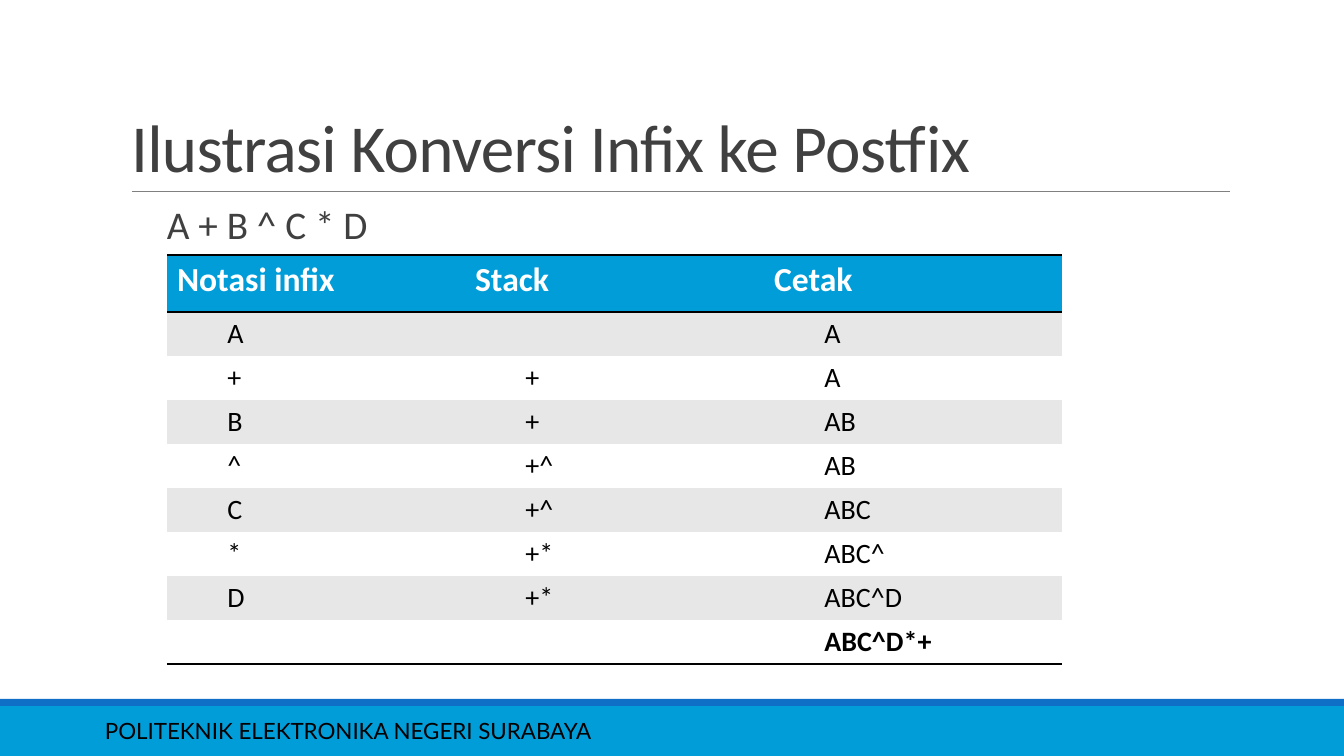
from lxml import etree
from pptx import Presentation
from pptx.dml.color import RGBColor
from pptx.enum.shapes import MSO_CONNECTOR, MSO_SHAPE
from pptx.enum.text import MSO_ANCHOR, MSO_AUTO_SIZE, PP_ALIGN
from pptx.oxml import parse_xml
from pptx.oxml.ns import nsdecls, qn
from pptx.util import Emu, Pt

RECT = MSO_SHAPE.RECTANGLE
STRAIGHT = MSO_CONNECTOR.STRAIGHT
MIDDLE, BOTTOM = MSO_ANCHOR.MIDDLE, MSO_ANCHOR.BOTTOM
LEFT = PP_ALIGN.LEFT
NO_FIT = MSO_AUTO_SIZE.NONE
SKY = RGBColor(0x00, 0x9D, 0xD9)
BLUE = RGBColor(0x0F, 0x6F, 0xC6)
RULE = RGBColor(0x80, 0x80, 0x80)
DARK = RGBColor(0x40, 0x40, 0x40)
BLACK = RGBColor(0x00, 0x00, 0x00)
WHITE = RGBColor(0xFF, 0xFF, 0xFF)
BAND = RGBColor(0xE7, 0xE7, 0xE7)
NO_STYLE = "{2D5ABB26-0587-4C30-8999-92F81FD0307C}"


def px(n):
    return Emu(round(n * 12192000 / 1344))


def style(p, font, size, color, bold=False):
    for r in p.runs:
        r.font.name = font
        r.font.size = Pt(size)
        r.font.color.rgb = color
        r.font.bold = bold


prs = Presentation()
prs.slide_width, prs.slide_height = px(1344), px(756)
s = prs.slides.add_slide(prs.slide_layouts[5])

for top, height, color in [(706, 50, SKY), (699, 7, BLUE)]:
    bar = s.shapes.add_shape(RECT, 0, px(top), px(1344), px(height))
    bar.shadow.inherit = False
    bar.fill.solid()
    bar.fill.fore_color.rgb = color
    bar.line.fill.background()

rule = s.shapes.add_connector(STRAIGHT, px(132), px(191), px(1230), px(191))
rule.line.color.rgb = RULE
rule.line.width = Pt(0.5)
etree.SubElement(rule._element.spPr, qn("a:effectLst"))

title = s.shapes.title
title.left, title.top, title.width, title.height = px(121), px(31), px(1109), px(160)
tf = title.text_frame
tf.auto_size = NO_FIT
tf.word_wrap = True
tf.vertical_anchor = BOTTOM
tf.text = "Ilustrasi Konversi Infix ke Postfix"
p = tf.paragraphs[0]
p.alignment = LEFT
p.line_spacing = 0.85
style(p, "Calibri", 48, DARK)
p.runs[0].font._element.set("spc", "-50")

footer = s.shapes.add_textbox(px(95), px(711), px(848), px(40))
tf = footer.text_frame
tf.word_wrap = True
tf.vertical_anchor = MIDDLE
tf.text = "POLITEKNIK ELEKTRONIKA NEGERI SURABAYA"
style(tf.paragraphs[0], "Lato", 16, BLACK)

formula = s.shapes.add_textbox(px(167), px(204), px(424), px(51))
tf = formula.text_frame
tf.word_wrap = True
tf.margin_left = tf.margin_right = 0
tf.text = "A + B ^ C * D"
p = tf.paragraphs[0]
p.line_spacing = 0.8
p.space_after = Pt(2)
style(p, "Calibri", 28, DARK)

steps = [
    ("Notasi infix", "Stack", "Cetak"),
    ("A", "", "A"),
    ("+", "+", "A"),
    ("B", "+", "AB"),
    ("^", "+^", "AB"),
    ("C", "+^", "ABC"),
    ("*", "+*", "ABC^"),
    ("D", "+*", "ABC^D"),
    ("", "", "ABC^D*+"),
]
last = len(steps) - 1
frame = s.shapes.add_table(len(steps), 3, px(167), px(255), px(895), px(409))
tbl = frame.table
tbl._tbl.tblPr.find(qn("a:tableStyleId")).text = NO_STYLE
for col, width in zip(tbl.columns, (298, 299, 298)):
    col.width = px(width)

for i, step in enumerate(steps):
    tbl.rows[i].height = px(44 if i else 57)
    for j, text in enumerate(step):
        cell = tbl.cell(i, j)
        cell.fill.solid()
        cell.fill.fore_color.rgb = SKY if i == 0 else BAND if i % 2 else WHITE
        cell.text = text
        p = cell.text_frame.paragraphs[0]
        if i == 0:
            style(p, "Calibri", 24, WHITE, True)
        else:
            p.level = 1
            p._p.get_or_add_pPr().set("marL", "457200")
            p._p.get_or_add_pPr().set("indent", "0")
            style(p, "Calibri", 20, BLACK, i == last)
        edges = {0: ("lnB", "lnT"), last: ("lnB",)}.get(i, ())
        for edge in edges:
            cell._tc.get_or_add_tcPr().insert(0, parse_xml(
                f'<a:{edge} {nsdecls("a")} w="25400"><a:solidFill>'
                f'<a:srgbClr val="{BLACK}"/></a:solidFill></a:{edge}>'))

prs.save("out.pptx")
